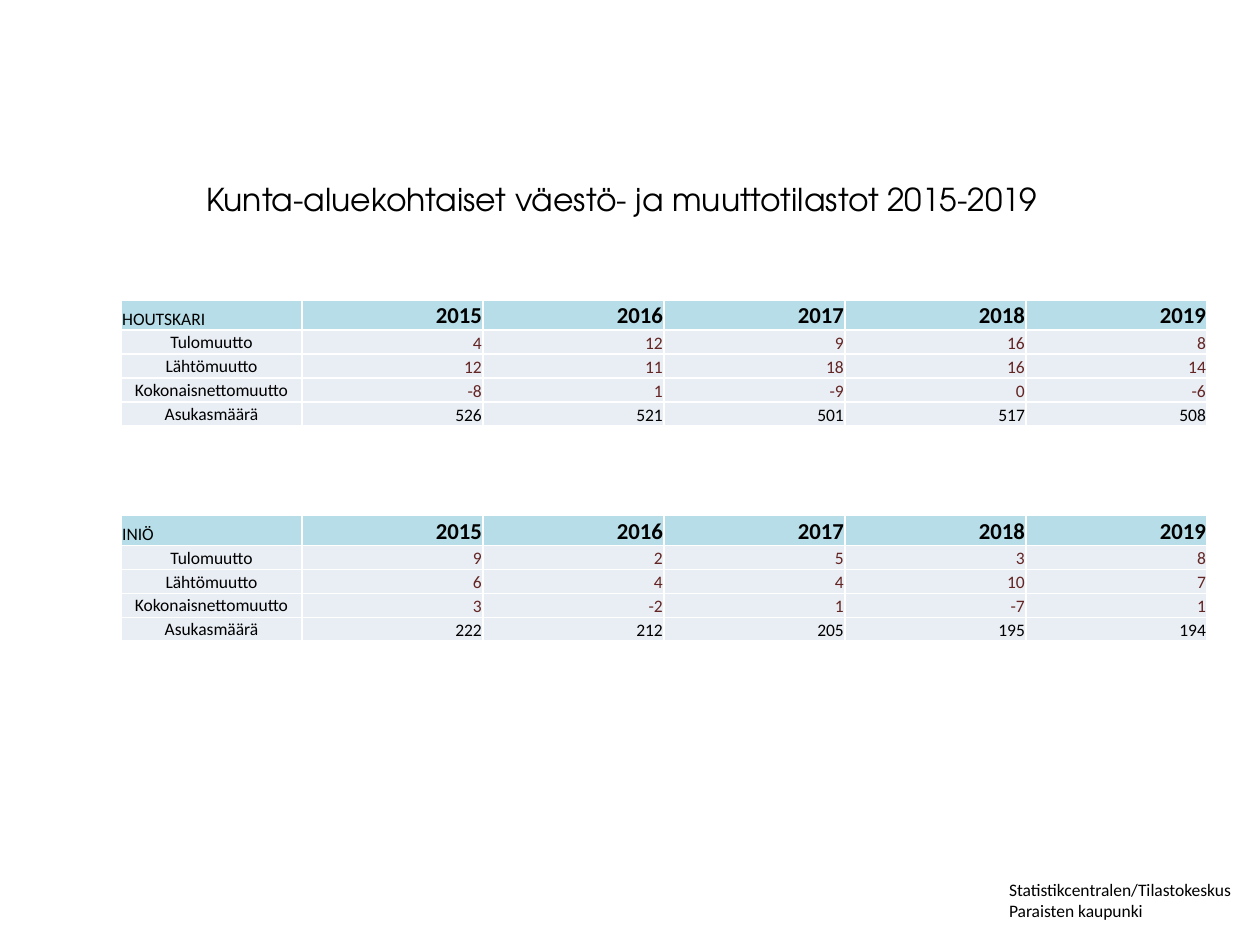
from pptx import Presentation
from pptx.dml.color import RGBColor
from pptx.enum.text import MSO_ANCHOR, PP_ALIGN
from pptx.oxml import parse_xml
from pptx.oxml.ns import nsdecls, qn
from pptx.util import Inches, Pt

LEFT, CENTER, RIGHT = PP_ALIGN.LEFT, PP_ALIGN.CENTER, PP_ALIGN.RIGHT
MIDDLE, BOTTOM = MSO_ANCHOR.MIDDLE, MSO_ANCHOR.BOTTOM

COLORS = {
    "text": "000000",
    "migration": "632523",
    "header": "B7DEE8",
    "body": "E9EDF4",
    "border": "FFFFFF",
}
BODY_FONT, TITLE_FONT = "Calibri", "TeX Gyre Adventor"

YEARS = [2015, 2016, 2017, 2018, 2019]
ROW_LABELS = ["Tulomuutto", "Lähtömuutto", "Kokonaisnettomuutto", "Asukasmäärä"]
AREAS = {
    "HOUTSKARI": [
        [4, 12, 9, 16, 8],
        [12, 11, 18, 16, 14],
        [-8, 1, -9, 0, -6],
        [526, 521, 501, 517, 508],
    ],
    "INIÖ": [
        [9, 2, 5, 3, 8],
        [6, 4, 4, 10, 7],
        [3, -2, 1, -7, 1],
        [222, 212, 205, 195, 194],
    ],
}
TABLE_LEFT, TABLE_TOP, TABLE_PITCH = 0.96, 2.38, 1.71
TABLE_WIDTH, HEADER_HEIGHT, ROW_HEIGHT = 8.62, 0.24, 0.19


def write_text(text_frame, text, size=10, font=BODY_FONT, color="text",
               bold=False, align=LEFT):
    paragraph = text_frame.paragraphs[0]
    paragraph.text = text
    paragraph.alignment = align
    for run in paragraph.runs:
        run.font.size = Pt(size)
        run.font.name = font
        run.font.bold = bold
        run.font.color.rgb = RGBColor.from_string(COLORS[color])
    # Line breaks take the text size, so that line spacing stays even
    for line_break in paragraph._p.findall(qn("a:br")):
        line_break.append(parse_xml(f'<a:rPr {nsdecls("a")} sz="{size * 100}"/>'))


class StatisticsSlide:
    def __init__(self, presentation):
        self.slide = presentation.slides.add_slide(presentation.slide_layouts[6])

    def text_box(self, left, top, width, height, text, **text_format):
        shape = self.slide.shapes.add_textbox(
            Inches(left), Inches(top), Inches(width), Inches(height))
        shape.text_frame.word_wrap = True
        write_text(shape.text_frame, text, **text_format)

    def cell(self, cell, text, fill, anchor=BOTTOM, **text_format):
        cell.margin_left = cell.margin_right = cell.margin_top = Inches(0.01)
        cell.margin_bottom = 0
        cell.vertical_anchor = anchor
        cell.fill.solid()
        cell.fill.fore_color.rgb = RGBColor.from_string(COLORS[fill])
        write_text(cell.text_frame, str(text), **text_format)
        # Borders come before the fill in the cell properties
        properties = cell._tc.get_or_add_tcPr()
        for position, side in enumerate(("lnL", "lnR", "lnT", "lnB")):
            properties.insert(position, parse_xml(
                f'<a:{side} {nsdecls("a")} w="{Pt(1)}"><a:solidFill>'
                f'<a:srgbClr val="{COLORS["border"]}"/></a:solidFill></a:{side}>'))

    def area_table(self, top, area, rows):
        height = HEADER_HEIGHT + ROW_HEIGHT * len(rows)
        table = self.slide.shapes.add_table(
            len(rows) + 1, len(YEARS) + 1, Inches(TABLE_LEFT), Inches(top),
            Inches(TABLE_WIDTH), Inches(height)).table
        table.first_row = table.horz_banding = False
        for row in table.rows:
            row.height = Inches(ROW_HEIGHT)
        table.rows[0].height = Inches(HEADER_HEIGHT)

        # Header row
        self.cell(table.cell(0, 0), area, "header")
        for column, year in enumerate(YEARS, 1):
            self.cell(table.cell(0, column), year, "header",
                      size=13, bold=True, align=RIGHT)

        # Migration rows, then population
        for index, (label, values) in enumerate(zip(ROW_LABELS, rows), 1):
            color = "text" if index == len(rows) else "migration"
            self.cell(table.cell(index, 0), label, "body",
                      anchor=MIDDLE, align=CENTER)
            for column, value in enumerate(values, 1):
                self.cell(table.cell(index, column), value, "body",
                          color=color, align=RIGHT)


def main():
    presentation = Presentation()
    presentation.slide_width, presentation.slide_height = Inches(10), Inches(7.5)
    slide = StatisticsSlide(presentation)

    # Source and title
    slide.text_box(7.91, 6.93, 2.02, 0.44,
                   "Statistikcentralen/Tilastokeskus\nParaisten kaupunki")
    slide.text_box(1.54, 1.38, 7.46, 0.71,
                   "Kunta-aluekohtaiset väestö- ja muuttotilastot 2015-2019",
                   size=18, font=TITLE_FONT)

    # One table per area
    for index, (area, rows) in enumerate(AREAS.items()):
        slide.area_table(TABLE_TOP + index * TABLE_PITCH, area, rows)

    presentation.save("out.pptx")


if __name__ == "__main__":
    main()
